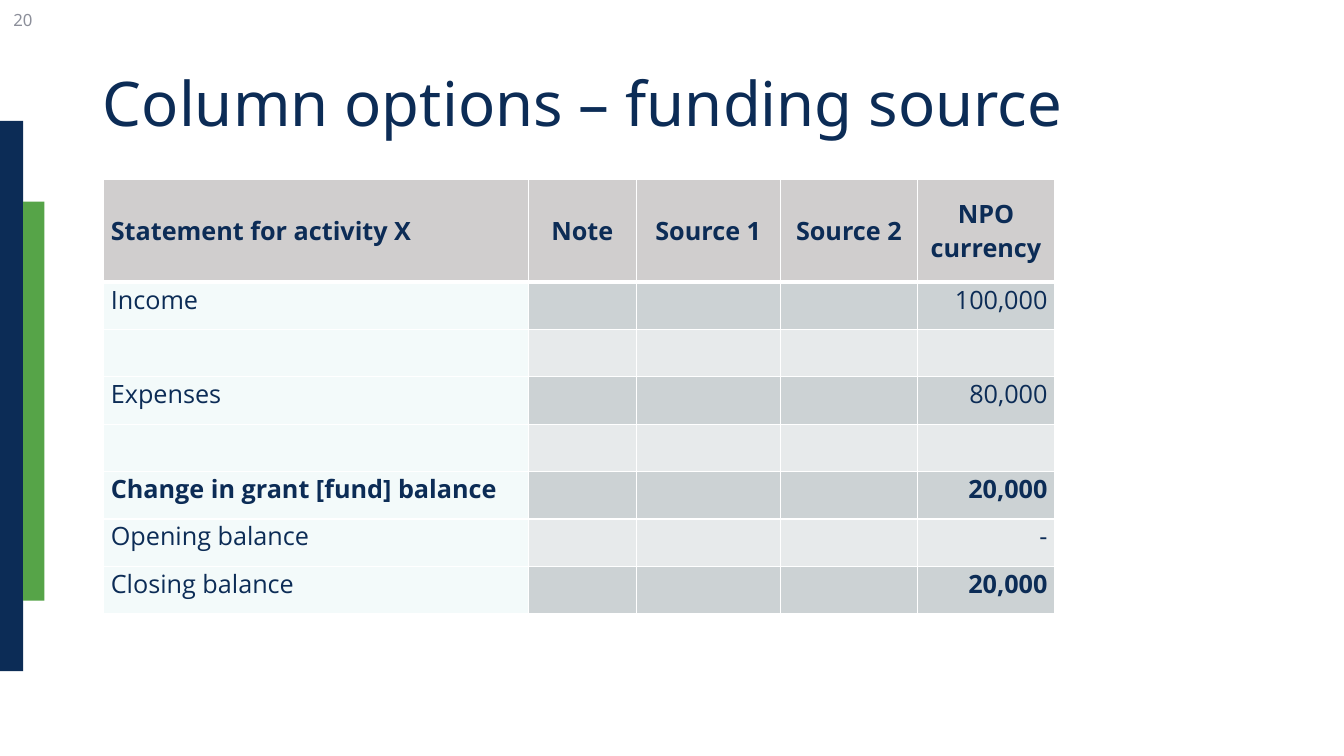
import pptx
import pptx.dml.color
import pptx.enum.shapes
import pptx.enum.text
import pptx.oxml
import pptx.oxml.ns
import pptx.util
from pptx.util import Inches

COLORS = {
    "navy": "0C2C56", "green": "56A448", "gray": "8C8F9A", "header": "D0CECE",
    "label": "8DCFD6", "dark": "CCD2D4", "light": "E7EAEB", "border": "FFFFFF",
}
ALIGN = pptx.enum.text.PP_ALIGN
MIDDLE = pptx.enum.text.MSO_ANCHOR.MIDDLE
COLUMN_WIDTHS = [4.21, 1.07, 1.43, 1.36, 1.36]
HEADER_HEIGHT, ROW_HEIGHT = 1.02, 0.47
HEADERS = ["Statement for activity X", "Note", "Source 1", "Source 2", "NPO currency"]
# label, amount, label is bold, amount is bold
ROWS = [
    ("Income", "100,000", False, False),
    ("", "", False, False),
    ("Expenses", "80,000", False, False),
    ("", "", False, False),
    ("Change in grant [fund] balance", "20,000", True, True),
    ("Opening balance", "-", False, False),
    ("Closing balance", "20,000", False, True),
]


def rgb(name):
    return pptx.dml.color.RGBColor.from_string(COLORS[name])


def style_font(font, size, color="navy", name="Noto Sans", bold=False):
    font.name = name
    font.size = pptx.util.Pt(size)
    font.bold = bold
    font.color.rgb = rgb(color)


def add_bar(s, left, top, width, height, color):
    sp = s.shapes.add_shape(pptx.enum.shapes.MSO_SHAPE.RECTANGLE, Inches(left),
                            Inches(top), Inches(width), Inches(height))
    sp.shadow.inherit = False
    sp.fill.solid()
    sp.fill.fore_color.rgb = rgb(color)
    sp.line.fill.background()


def set_title(s, text):
    sp = s.shapes.title
    sp.left, sp.top, sp.width, sp.height = map(Inches, (0.92, 0.33, 11.5, 1.45))
    tf = sp.text_frame
    tf.vertical_anchor = MIDDLE
    p = tf.paragraphs[0]
    p.alignment = ALIGN.LEFT
    p.line_spacing = 0.9
    r = p.add_run()
    r.text = text
    style_font(r.font, 44)


def add_page_number(s, text):
    sp = s.shapes.add_textbox(0, 0, Inches(0.42), Inches(0.4))
    tf = sp.text_frame
    tf.word_wrap = True
    tf.vertical_anchor = MIDDLE
    p = tf.paragraphs[0]
    p.alignment = ALIGN.RIGHT
    r = p.add_run()
    r.text = text
    style_font(r.font, 12, "gray")


def set_borders(cell, bottom=1):
    tc_pr = cell._tc.get_or_add_tcPr()
    for side, points in (("L", 1), ("R", 1), ("T", 1), ("B", bottom)):
        tc_pr.append(pptx.oxml.parse_xml(
            f'<a:ln{side} {pptx.oxml.ns.nsdecls("a")} w="{pptx.util.Pt(points)}">'
            f'<a:solidFill><a:srgbClr val="{COLORS["border"]}"/></a:solidFill>'
            f'</a:ln{side}>'))


def set_cell(cell, text, fill, align, bold=False, header=False):
    set_borders(cell, bottom=3 if header else 1)
    cell.fill.solid()
    cell.fill.fore_color.rgb = rgb(fill)
    if fill == "label":
        color = cell._tc.tcPr.find("a:solidFill/a:srgbClr", pptx.oxml.ns._nsmap)
        color.append(pptx.oxml.parse_xml(
            f'<a:alpha {pptx.oxml.ns.nsdecls("a")} val="10000"/>'))
    cell.margin_left = cell.margin_right = Inches(0.07)
    cell.margin_top = cell.margin_bottom = 0
    if header:
        cell.vertical_anchor = MIDDLE
    p = cell.text_frame.paragraphs[0]
    p.alignment = align
    style_font(p.font, 18, name="Open Sans", bold=bold)
    if text:
        r = p.add_run()
        r.text = text
        style_font(r.font, 18, name="Open Sans", bold=bold)


def add_statement_table(s):
    height = HEADER_HEIGHT + ROW_HEIGHT * len(ROWS)
    table = s.shapes.add_table(len(ROWS) + 1, len(HEADERS), Inches(1.03), Inches(1.78),
                               Inches(sum(COLUMN_WIDTHS)), Inches(height)).table
    for column, width in zip(table.columns, COLUMN_WIDTHS):
        column.width = Inches(width)
    for i, row in enumerate(table.rows):
        row.height = Inches(ROW_HEIGHT if i else HEADER_HEIGHT)
    for j, text in enumerate(HEADERS):
        align = ALIGN.CENTER if j else ALIGN.JUSTIFY
        set_cell(table.cell(0, j), text, "header", align, bold=True, header=True)
    for i, (label, amount, label_bold, amount_bold) in enumerate(ROWS, 1):
        band = "dark" if i % 2 else "light"
        set_cell(table.cell(i, 0), label, "label", ALIGN.JUSTIFY, label_bold)
        for j in range(1, 4):
            set_cell(table.cell(i, j), "", band, ALIGN.RIGHT)
        set_cell(table.cell(i, 4), amount, band, ALIGN.RIGHT, amount_bold)


def main():
    prs = pptx.Presentation()
    prs.slide_width, prs.slide_height = Inches(13.33), Inches(7.5)
    s = prs.slides.add_slide(prs.slide_layouts[5])
    add_bar(s, 0, 1.2, 0.23, 5.46, "navy")
    add_bar(s, 0.23, 2, 0.21, 3.96, "green")
    set_title(s, "Column options – funding source")
    add_page_number(s, "20")
    add_statement_table(s)
    prs.save("out.pptx")


if __name__ == "__main__":
    main()
